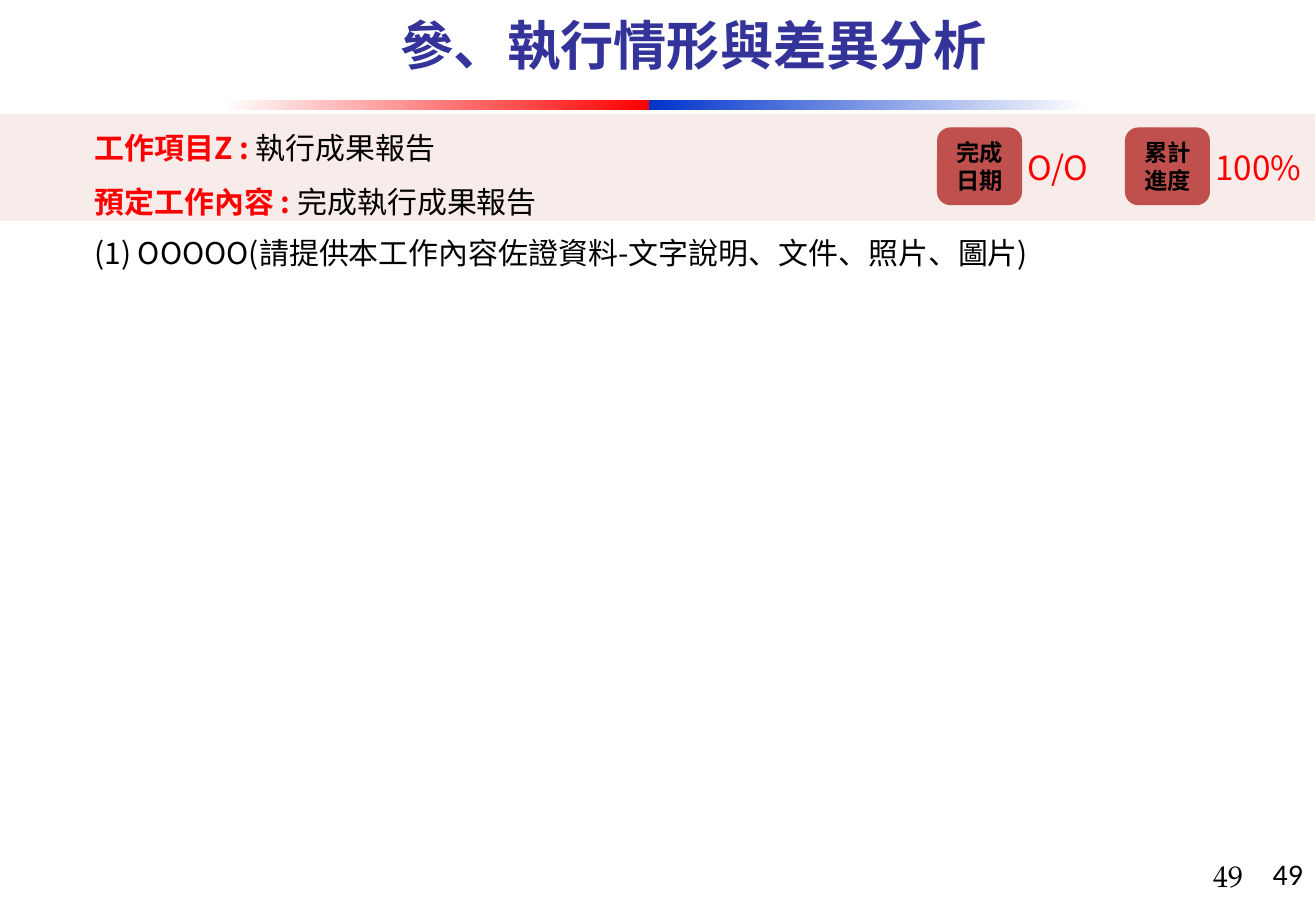
from lxml import etree
from pptx import Presentation
from pptx import util as u
from pptx.dml.color import RGBColor
from pptx.enum import shapes, text
from pptx.oxml import ns

BLACK = RGBColor(0x00, 0x00, 0x00)
WHITE = RGBColor(0xFF, 0xFF, 0xFF)
RED = RGBColor(0xFF, 0x00, 0x00)
BLUE = RGBColor(0x00, 0x33, 0xCC)
NAVY = RGBColor(0x33, 0x33, 0x99)
BRICK = RGBColor(0xC0, 0x50, 0x4D)
PINK = RGBColor(0xF2, 0xDC, 0xDB)
SANS_SC = "Noto Sans CJK SC"
SANS_TC = "Noto Sans CJK TC"
STATUS_PITCH = 113


def points(box):
    """Turn a left, top, width, height box into lengths."""
    return [u.Pt(value) for value in box]


def write_paragraphs(frame, paragraphs, font_name, size, spacing=None,
                     align=text.PP_ALIGN.LEFT):
    """Write paragraphs, each a list of (words, colour, bold) runs."""
    for index, runs in enumerate(paragraphs):
        paragraph = frame.add_paragraph() if index else frame.paragraphs[0]
        paragraph.alignment = align
        if spacing:
            paragraph.line_spacing = u.Pt(spacing)
        for words, colour, bold in runs:
            run = paragraph.add_run()
            run.text = words
            formats = {"name": font_name, "size": u.Pt(size), "bold": bold}
            for name, value in formats.items():
                setattr(run.font, name, value)
            run.font.color.rgb = colour
            east_asian = etree.SubElement(run._r.get_or_add_rPr(), ns.qn("a:ea"))
            east_asian.set("typeface", font_name)


def add_text(slide, box, paragraphs, font_name, size, spacing=None,
             align=text.PP_ALIGN.LEFT, anchor=text.MSO_ANCHOR.TOP):
    """Add a wrapping text box."""
    frame = slide.shapes.add_textbox(*points(box)).text_frame
    for name, value in {"word_wrap": True, "vertical_anchor": anchor}.items():
        setattr(frame, name, value)
    write_paragraphs(frame, paragraphs, font_name, size, spacing, align)


def add_gradient_bar(slide, box, colours):
    """Add a bar that fades from left to right."""
    shape = slide.shapes.add_shape(shapes.MSO_SHAPE.RECTANGLE, *points(box))
    shape.shadow.inherit = False
    shape.line.fill.background()
    shape.fill.gradient()
    shape.fill.gradient_angle = 0
    for position, (stop, colour) in enumerate(zip(shape.fill.gradient_stops, colours)):
        stop.position = position
        stop.color.rgb = colour


def add_block(slide, kind, box, fill, line):
    """Add a solid shape with a thin outline."""
    shape = slide.shapes.add_shape(kind, *points(box))
    shape.shadow.inherit = False
    shape.fill.solid()
    shape.fill.fore_color.rgb = fill
    shape.line.color.rgb = line
    shape.line.width = u.Pt(0.75)
    return shape


def add_band(slide):
    """Add the translucent band behind the work item."""
    band = add_block(slide, shapes.MSO_SHAPE.RECTANGLE, (-0.7, 68.4, 792, 64.8), PINK, WHITE)
    colour = band.fill._xPr.find(ns.qn("a:solidFill")).find(ns.qn("a:srgbClr"))
    etree.SubElement(colour, ns.qn("a:alpha")).set("val", "53000")


def add_status(slide, index, label, value, value_width):
    """Add a rounded label with its value to the right."""
    offset = index * STATUS_PITCH
    badge = add_block(slide, shapes.MSO_SHAPE.ROUNDED_RECTANGLE,
                      (563.8 + offset, 77, 50.4, 46), BRICK, BRICK)
    frame = badge.text_frame
    formats = {"word_wrap": False, "vertical_anchor": text.MSO_ANCHOR.MIDDLE}
    for name, setting in formats.items():
        setattr(frame, name, setting)
    write_paragraphs(frame, [[(words, BLACK, True)] for words in label],
                     SANS_TC, 14, 16.8, text.PP_ALIGN.CENTER)
    add_text(slide, (610.6 + offset, 82.8, value_width, 31.7),
             [[(value, RED, False)]], SANS_TC, 20, 26)


def main():
    """Build the slide and save it."""
    presentation = Presentation()
    presentation.slide_width = u.Pt(791.28)
    presentation.slide_height = u.Pt(540)
    slide = presentation.slides.add_slide(presentation.slide_layouts[6])

    add_gradient_bar(slide, (133.2, 60.3, 257, 5.8), (WHITE, RED))
    add_gradient_bar(slide, (390.2, 60.3, 263.5, 5.8), (BLUE, WHITE))
    page_number = [[("49", BLACK, False)]]
    add_text(slide, (638.6, 510.5, 152, 29.5), page_number, "Calibri", 18,
             align=text.PP_ALIGN.RIGHT, anchor=text.MSO_ANCHOR.MIDDLE)
    add_text(slide, (722.9, 511.9, 67.7, 28), page_number, "TeX Gyre Pagella", 18)

    add_band(slide)
    add_text(slide, (49.7, 63.4, 707.8, 72.7), [
        [("工作項目Z : ", RED, True), ("執行成果報告", BLACK, False)],
        [("預定工作內容 : ", RED, True), ("完成執行成果報告", BLACK, False)],
    ], SANS_SC, 18, 32.4)
    add_status(slide, 0, ("完成", "日期"), "O/O", 67.7)
    add_status(slide, 1, ("累計", "進度"), "100%", 81.4)

    add_text(slide, (152.6, 0, 529.2, 49), [[("參、執行情形與差異分析", NAVY, True)]],
             SANS_SC, 32, 42, text.PP_ALIGN.CENTER, text.MSO_ANCHOR.MIDDLE)
    add_text(slide, (49.7, 137.5, 589, 28.8),
             [[("(1) OOOOO(請提供本工作內容佐證資料-文字說明、文件、照片、圖片)", BLACK, False)]],
             SANS_SC, 18, 21.6)
    presentation.save("out.pptx")


if __name__ == "__main__":
    main()
